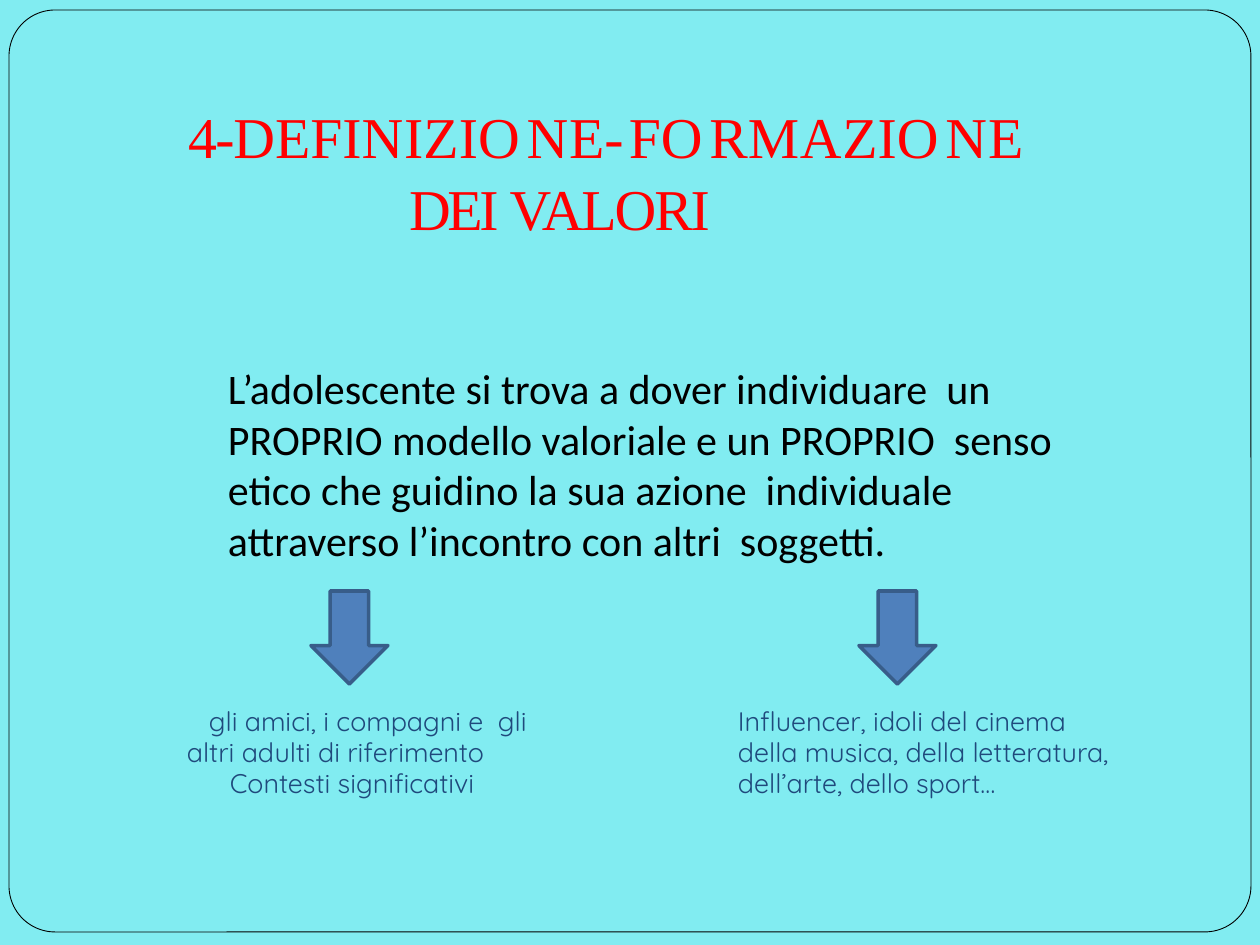
from pptx import Presentation
from pptx.dml.color import RGBColor
from pptx.enum.shapes import MSO_SHAPE
from pptx.enum.text import MSO_ANCHOR, PP_ALIGN
from pptx.util import Pt

SCALE = 914400 // 126
GAPS = {"E": -3.2, "F": -2.7, "I": -1.9, "N": 0.5, "Z": -3.7, "O": 3.9,
        "-": 2.9, "R": -3, "M": 0.3, "A": 0.5}
TITLE = [("4-D", -0.8), *((c, GAPS[c]) for c in "EFINIZIONE-FORMAZION"),
         ("E  DEI ", -1.9), ("VALORI", -1.2)]
BODY = ("L’adolescente si trova a dover individuare  un PROPRIO modello "
        "valoriale e un PROPRIO  senso etico che guidino la sua azione  "
        "individuale attraverso l’incontro con altri  soggetti.")
PEERS = "gli amici, i compagni e  gli altri adulti di riferimento"
IDOLS = ("Influencer, idoli del cinema  della musica, della letteratura,  "
         "dell’arte, dello sport…")


def px(*nums):
    """Turn pixel lengths into EMU."""
    return [n * SCALE for n in nums]


def color(code):
    """Return a colour from a hex string."""
    return RGBColor.from_string(code)


def place(shape, box):
    """Set the position and size of a shape."""
    shape.left, shape.top, shape.width, shape.height = px(*box)


def setup(shape):
    """Give a text frame no margins, wrapping and a top anchor."""
    frame = shape.text_frame
    frame.margin_left = frame.margin_top = 0
    frame.margin_right = frame.margin_bottom = 0
    frame.word_wrap = True
    frame.vertical_anchor = MSO_ANCHOR.TOP
    return frame


def style(para, face, size, code, lead, left=0, first=0):
    """Set font, line spacing and indents of a paragraph."""
    para.font.name = face
    para.font.size = Pt(size)
    para.font.color.rgb = color(code)
    para.alignment = PP_ALIGN.LEFT
    para.line_spacing = lead
    props = para._p.get_or_add_pPr()
    props.set("marL", str(left * SCALE))
    props.set("indent", str(first * SCALE))


def title(slide, box):
    """Fill the title with individually spaced letters."""
    shape = slide.shapes.title
    place(shape, box)
    para = setup(shape).paragraphs[0]
    style(para, "Times New Roman", 33, "FF0000", 1.05, 222, -221)
    for text, gap in TITLE:
        run = para.add_run()
        run.text = text
        run.font._element.set("spc", str(round(gap * 100)))


def text(slide, box, lines, face, size, code, lead):
    """Add a text box from (text, left, first) lines."""
    frame = setup(slide.shapes.add_textbox(*px(*box)))
    for i, (words, left, first) in enumerate(lines):
        para = frame.add_paragraph() if i else frame.paragraphs[0]
        para.text = words
        style(para, face, size, code, lead, left, first)


def shape(slide, kind, box, line, width, fill=None):
    """Add a preset shape with an outline and an optional fill."""
    item = slide.shapes.add_shape(kind, *px(*box))
    item.shadow.inherit = False
    item.line.color.rgb = color(line)
    item.line.width = Pt(width)
    if fill:
        item.fill.solid()
        item.fill.fore_color.rgb = color(fill)
    else:
        item.fill.background()
    return item


def main():
    """Build and save the slide."""
    deck = Presentation()
    deck.slide_width, deck.slide_height = px(1260, 945)
    slide = deck.slides.add_slide(deck.slide_layouts[5])
    back = slide.background.fill
    back.solid()
    back.fore_color.rgb = color("81ECF1")

    frame = shape(slide, MSO_SHAPE.ROUNDED_RECTANGLE, (9, 10, 1242, 922),
                  "000000", 0.5)
    frame.adjustments[0] = 0.05
    title(slide, (187, 97, 872, 140))
    text(slide, (227, 363, 869, 204), [(BODY, 1, 0)],
         "Calibri", 24, "000000", 1)
    for left in (311, 859):
        shape(slide, MSO_SHAPE.DOWN_ARROW, (left, 591, 77, 93),
              "385D89", 2, "4F80BC")
    notes = [
        ((186, 706, 345, 98),
         [(PEERS, 1, 22), ("Contesti significativi", 44, 0)]),
        ((737, 706, 401, 98), [(IDOLS, 1, 0)]),
    ]
    for box, lines in notes:
        text(slide, box, lines, "Quicksand", 15.4, "1F497C", 0.97)
    deck.save("out.pptx")


if __name__ == "__main__":
    main()
